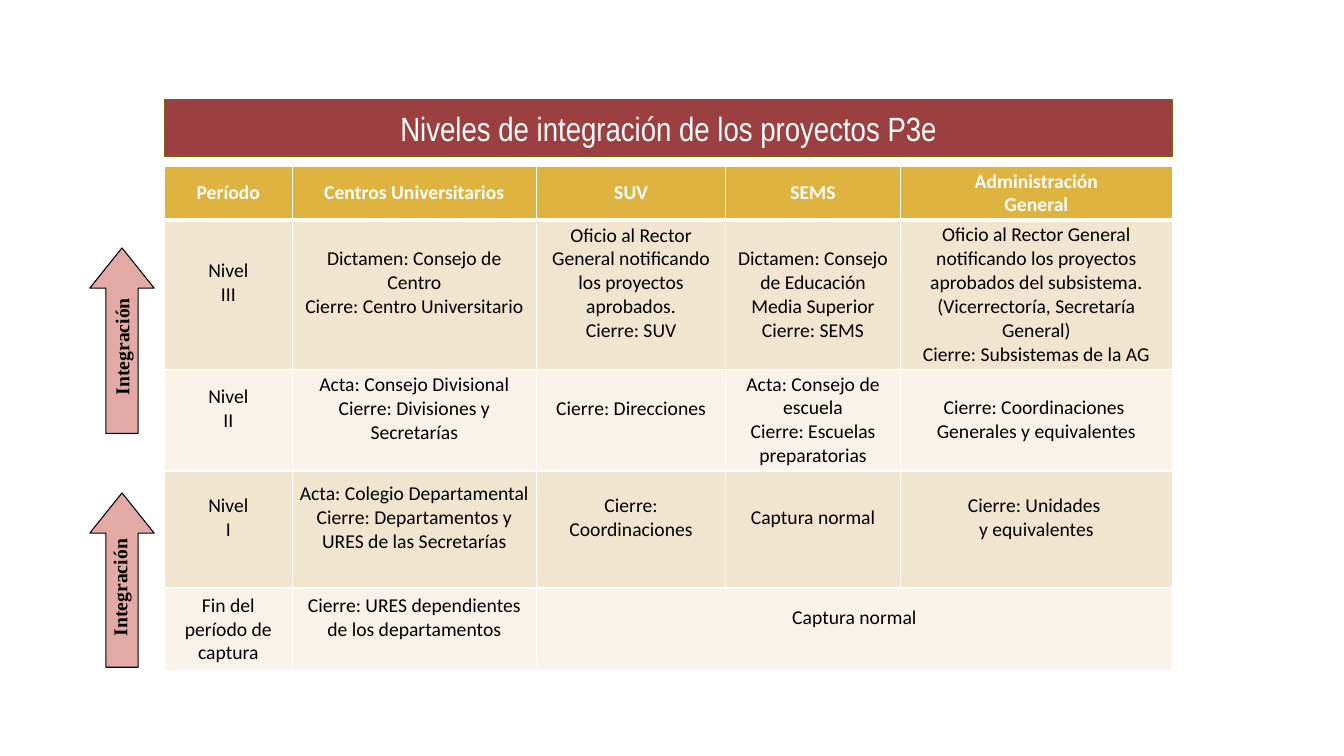
import pptx
import pptx.util
import pptx.dml.color
import pptx.enum.shapes
import pptx.enum.text
import pptx.oxml.ns
from lxml import etree

Inches = pptx.util.Inches
Anchor = pptx.enum.text.MSO_ANCHOR
Align = pptx.enum.text.PP_ALIGN

COLORS = {
    "title": "9B3F40", "title_edge": "7A5E15", "header": "DEB340",
    "band_dark": "F2E5CF", "band_light": "F9F2E8", "arrow": "E3AAA5",
    "white": "FFFFFF", "black": "000000",
}
COLUMN_WIDTHS = [1.27, 2.42, 1.88, 1.73, 2.7]
ROW_HEIGHTS = [0.49, 1.38, 1.01, 1.16, 0.82]
LEVELS = [
    ["Período", "Centros Universitarios", "SUV", "SEMS", "Administración\nGeneral"],
    ["Nivel\nIII",
     "Dictamen: Consejo de Centro\nCierre: Centro Universitario",
     "Oficio al Rector General notificando los proyectos aprobados.\nCierre: SUV",
     "Dictamen: Consejo de Educación Media Superior\nCierre: SEMS",
     "Oficio al Rector General notificando los proyectos aprobados del subsistema. "
     "(Vicerrectoría, Secretaría General)\nCierre: Subsistemas de la AG"],
    ["Nivel\nII",
     "Acta: Consejo Divisional\nCierre: Divisiones y Secretarías",
     "Cierre: Direcciones",
     "Acta: Consejo de escuela\nCierre: Escuelas preparatorias",
     "Cierre: Coordinaciones \nGenerales y equivalentes"],
    ["Nivel\nI",
     "Acta: Colegio Departamental\nCierre: Departamentos y URES de las Secretarías",
     "Cierre: Coordinaciones",
     "Captura normal",
     "Cierre: Unidades \ny equivalentes"],
    ["Fin del período de captura",
     "Cierre: URES dependientes de los departamentos",
     "Captura normal"],
]
# Columns of each row whose text sits half a line above the middle
RAISED_COLUMNS = [(), (0, 1, 2), (0, 1, 2), (0, 1, 2, 3, 4), (1, 2)]


def rgb(name):
    return pptx.dml.color.RGBColor.from_string(COLORS[name])


def write_text(frame, text, size, font, color, bold=False, align=Align.CENTER):
    frame.text = text
    formats = {"size": pptx.util.Pt(size), "name": font, "bold": bold}
    for para in frame.paragraphs:
        para.alignment = align
        for name, value in formats.items():
            setattr(para.font, name, value)
        para.font.color.rgb = rgb(color)


def paint(shape, fill, line):
    shape.fill.solid()
    shape.fill.fore_color.rgb = rgb(fill)
    shape.line.color.rgb = rgb(line)
    shape.line.width = pptx.util.Pt(0.75)


def add_borders(cell, widths):
    properties = cell._tc.get_or_add_tcPr()
    qn = pptx.oxml.ns.qn
    for side, width in widths.items():
        line = etree.SubElement(properties, qn("a:ln" + side), w=str(pptx.util.Pt(width)))
        fill = etree.SubElement(line, qn("a:solidFill"))
        etree.SubElement(fill, qn("a:srgbClr"), val=COLORS["white"])


def add_title(page, left, top, width, height):
    title = page.shapes.title
    placement = {"left": left, "top": top, "width": width, "height": height}
    for name, value in placement.items():
        setattr(title, name, Inches(value))
    paint(title, "title", "title_edge")
    frame = title.text_frame
    write_text(frame, "Niveles de integración de los proyectos P3e", 24, "Arial Narrow", "white")
    frame.auto_size = pptx.enum.text.MSO_AUTO_SIZE.NONE
    frame.vertical_anchor = Anchor.MIDDLE
    frame.word_wrap = True


def add_levels_table(page, left, top, width, height):
    table = page.shapes.add_table(
        len(ROW_HEIGHTS), len(COLUMN_WIDTHS),
        Inches(left), Inches(top), Inches(width), Inches(height)).table
    for column, column_width in zip(table.columns, COLUMN_WIDTHS):
        column.width = Inches(column_width)
    for row, row_height in zip(table.rows, ROW_HEIGHTS):
        row.height = Inches(row_height)
    table.cell(4, 2).merge(table.cell(4, 4))

    for r, texts in enumerate(LEVELS):
        header = r == 0
        band = "header" if header else "band_dark" if r % 2 else "band_light"
        for c in range(len(COLUMN_WIDTHS)):
            cell = table.cell(r, c)
            add_borders(cell, {"L": 1, "R": 1, "T": 3 if r == 1 else 1, "B": 3 if header else 1})
            cell.fill.solid()
            cell.fill.fore_color.rgb = rgb(band)
            if cell.is_spanned:
                continue
            layout = {
                "vertical_anchor": Anchor.MIDDLE,
                "margin_left": Inches(0.07), "margin_right": Inches(0.07),
                "margin_top": Inches(0.03),
                "margin_bottom": Inches(0.26 if c in RAISED_COLUMNS[r] else 0.03),
            }
            for name, value in layout.items():
                setattr(cell, name, value)
            write_text(cell.text_frame, texts[c], 14, "Calibri",
                       "white" if header else "black", bold=header)


def add_integration_arrow(page, left, top, width, height, caption_center, caption_length):
    """Up arrow with a caption reading upwards; the centre is an offset from the arrow's corner."""
    group = page.shapes.add_group_shape()
    arrow = group.shapes.add_shape(
        pptx.enum.shapes.MSO_SHAPE.UP_ARROW,
        Inches(left), Inches(top), Inches(width), Inches(height))
    arrow.shadow.inherit = False
    arrow.adjustments[0] = 0.5
    arrow.adjustments[1] = 0.625
    paint(arrow, "arrow", "black")

    center_x, center_y = caption_center
    thickness = 0.34
    caption = group.shapes.add_textbox(
        Inches(left + center_x - caption_length / 2), Inches(top + center_y - thickness / 2),
        Inches(caption_length), Inches(thickness))
    caption.rotation = 270
    caption.text_frame.word_wrap = True
    write_text(caption.text_frame, "Integración", 14, "Times New Roman", "black",
               bold=True, align=Align.LEFT)


def main():
    deck = pptx.Presentation()
    deck.slide_width, deck.slide_height = Inches(13.33), Inches(7.5)
    page = deck.slides.add_slide(deck.slide_layouts.get_by_name("Title Only"))
    add_title(page, 1.63, 0.99, 10, 0.56)
    add_levels_table(page, 1.63, 1.65, 10, sum(ROW_HEIGHTS))
    add_integration_arrow(page, 0.89, 4.89, 0.64, 1.73, (0.3, 0.71), 1.62)
    add_integration_arrow(page, 0.89, 2.46, 0.64, 1.84, (0.32, 0.7), 1.72)
    deck.save("out.pptx")


if __name__ == "__main__":
    main()
